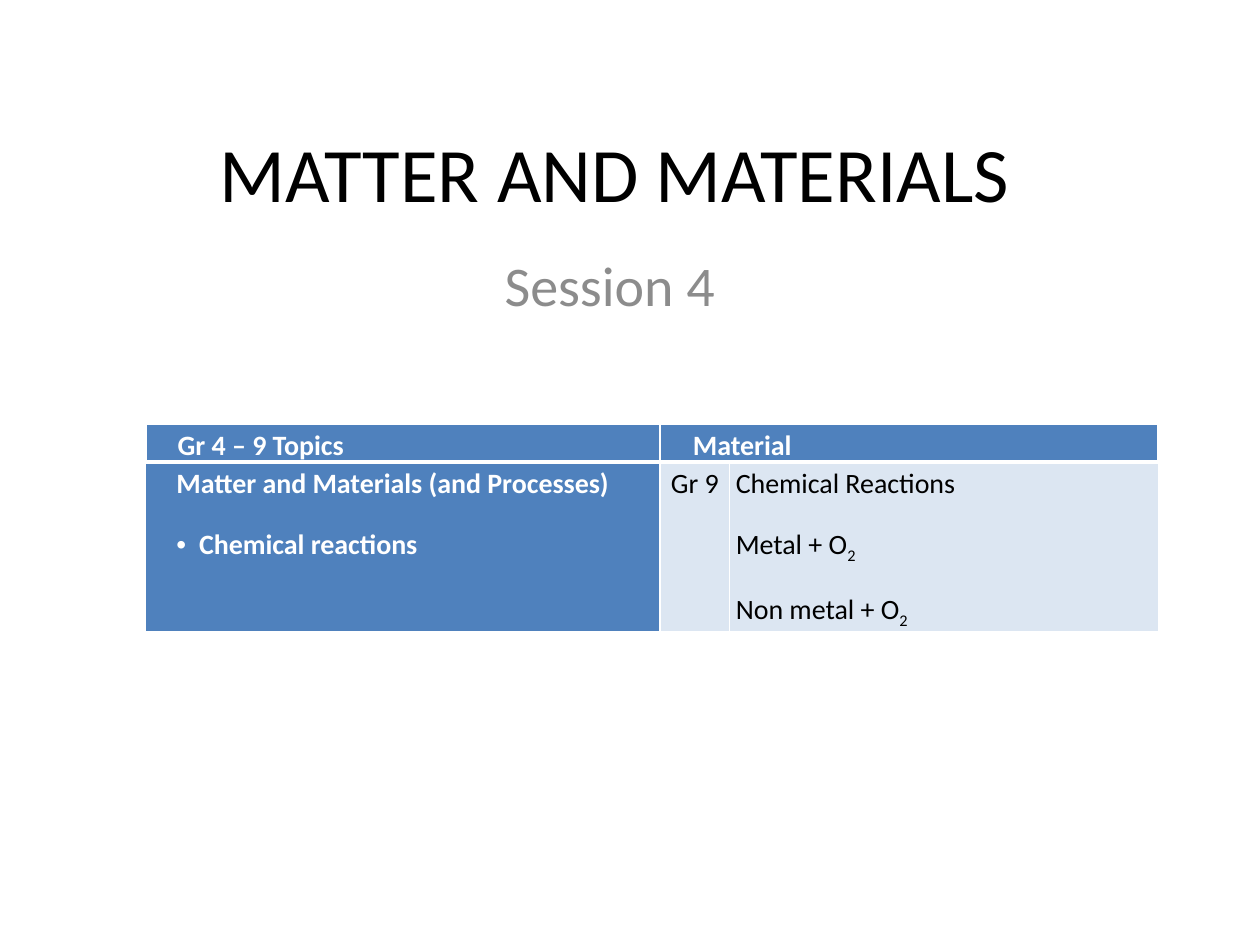
from lxml import etree
from pptx import Presentation
from pptx.dml.color import RGBColor
from pptx.enum.text import MSO_ANCHOR, PP_ALIGN
from pptx.oxml.ns import qn
from pptx.util import Inches, Pt

CENTER = PP_ALIGN.CENTER
LEFT = PP_ALIGN.LEFT
MIDDLE = MSO_ANCHOR.MIDDLE
BLUE, PALE, WHITE, BLACK, GREY = "4F81BD", "DCE6F2", "FFFFFF", "000000", "8C8C8C"


def color(code):
    return RGBColor.from_string(code)


class Deck:
    font = "Calibri"

    def __init__(self):
        self.prs = Presentation()
        self.prs.slide_width = Inches(10)
        self.prs.slide_height = Inches(7.5)
        self.slide = self.prs.slides.add_slide(self.prs.slide_layouts[5])

    def style(self, para, size, code, bold=False, align=LEFT):
        para.alignment = align
        for run in para.runs:
            run.font.name = self.font
            run.font.size = Pt(size)
            run.font.bold = bold
            run.font.color.rgb = color(code)

    def title(self, text, left, top, width, height):
        box = self.slide.shapes.title
        box.left, box.top = Inches(left), Inches(top)
        box.width, box.height = Inches(width), Inches(height)
        box.text_frame.text = text
        box.text_frame.vertical_anchor = MIDDLE
        self.style(box.text_frame.paragraphs[0], 44, BLACK, align=CENTER)

    def text(self, text, left, top, width, height):
        box = self.slide.shapes.add_textbox(
            Inches(left), Inches(top), Inches(width), Inches(height))
        box.text_frame.word_wrap = True
        box.text_frame.text = text
        self.style(box.text_frame.paragraphs[0], 32, GREY, align=CENTER)

    def table(self, left, top, widths, heights):
        frame = self.slide.shapes.add_table(
            len(heights), len(widths), Inches(left), Inches(top),
            Inches(sum(widths)), Inches(sum(heights)))
        grid = frame.table
        for col, width in zip(grid.columns, widths):
            col.width = Inches(width)
        for row, height in zip(grid.rows, heights):
            row.height = Inches(height)
        return grid

    def cell(self, cell, text, fill, code, bold=False, pad=0.05,
             align=LEFT, indent=(0, 0), edges=(1, 1, 2.25, 1)):
        cell.margin_left = cell.margin_right = Inches(pad)
        cell.margin_top = cell.margin_bottom = 0
        cell.fill.solid()
        cell.fill.fore_color.rgb = color(fill)
        self.border(cell, edges)
        cell.text_frame.text = text
        for para in cell.text_frame.paragraphs:
            para.line_spacing = 1.15
            para.space_before = para.space_after = Pt(6)
            props = para._p.get_or_add_pPr()
            props.set("marL", str(Inches(indent[0])))
            props.set("indent", str(Inches(indent[1])))
            self.style(para, 16, code, bold, align)

    def border(self, cell, edges):
        props = cell._tc.get_or_add_tcPr()
        for spot, (side, width) in enumerate(zip("LRTB", edges)):
            line = etree.Element(qn(f"a:ln{side}"), w=str(Pt(width)))
            fill = etree.SubElement(line, qn("a:solidFill"))
            etree.SubElement(fill, qn("a:srgbClr"), val=WHITE)
            props.insert(spot, line)

    def bullet(self, para):
        props = para._p.get_or_add_pPr()
        etree.SubElement(props, qn("a:buFont"), typeface="Arial")
        etree.SubElement(props, qn("a:buChar"), char="•")

    def lower(self, para, text):
        run = para.add_run()
        run.text = text
        self.style(para, 16, BLACK)
        run._r.get_or_add_rPr().set("baseline", "-25000")


def main():
    deck = Deck()
    deck.title("MATTER AND MATERIALS", 0.63, 0.56, 8.5, 1.61)
    deck.text("Session 4", 1.34, 1.94, 7, 1.92)

    grid = deck.table(1.15, 3.36, (4.09, 0.55, 3.41), (0.3, 1.35))
    grid.cell(0, 1).merge(grid.cell(0, 2))
    heads = ("Gr 4 – 9 Topics", (2.25, 1, 2.25, 2.25)), ("Material", (1, 2.25, 2.25, 2.25))
    for col, (text, edges) in enumerate(heads):
        deck.cell(grid.cell(0, col), text, BLUE, WHITE, True, 0.06,
                  indent=(0.2, 0), edges=edges)

    topic, grade, matter = (grid.cell(1, col) for col in range(3))
    deck.cell(topic, "Matter and Materials (and Processes)\nChemical reactions",
              BLUE, WHITE, True, indent=(0.38, -0.18))
    deck.bullet(topic.text_frame.paragraphs[1])
    deck.cell(grade, "Gr 9", PALE, BLACK, align=CENTER)
    deck.cell(matter, "Chemical Reactions\nMetal + O\nNon metal + O", PALE, BLACK)
    for para in matter.text_frame.paragraphs[1:]:
        deck.lower(para, "2")

    deck.prs.save("out.pptx")


if __name__ == "__main__":
    main()
